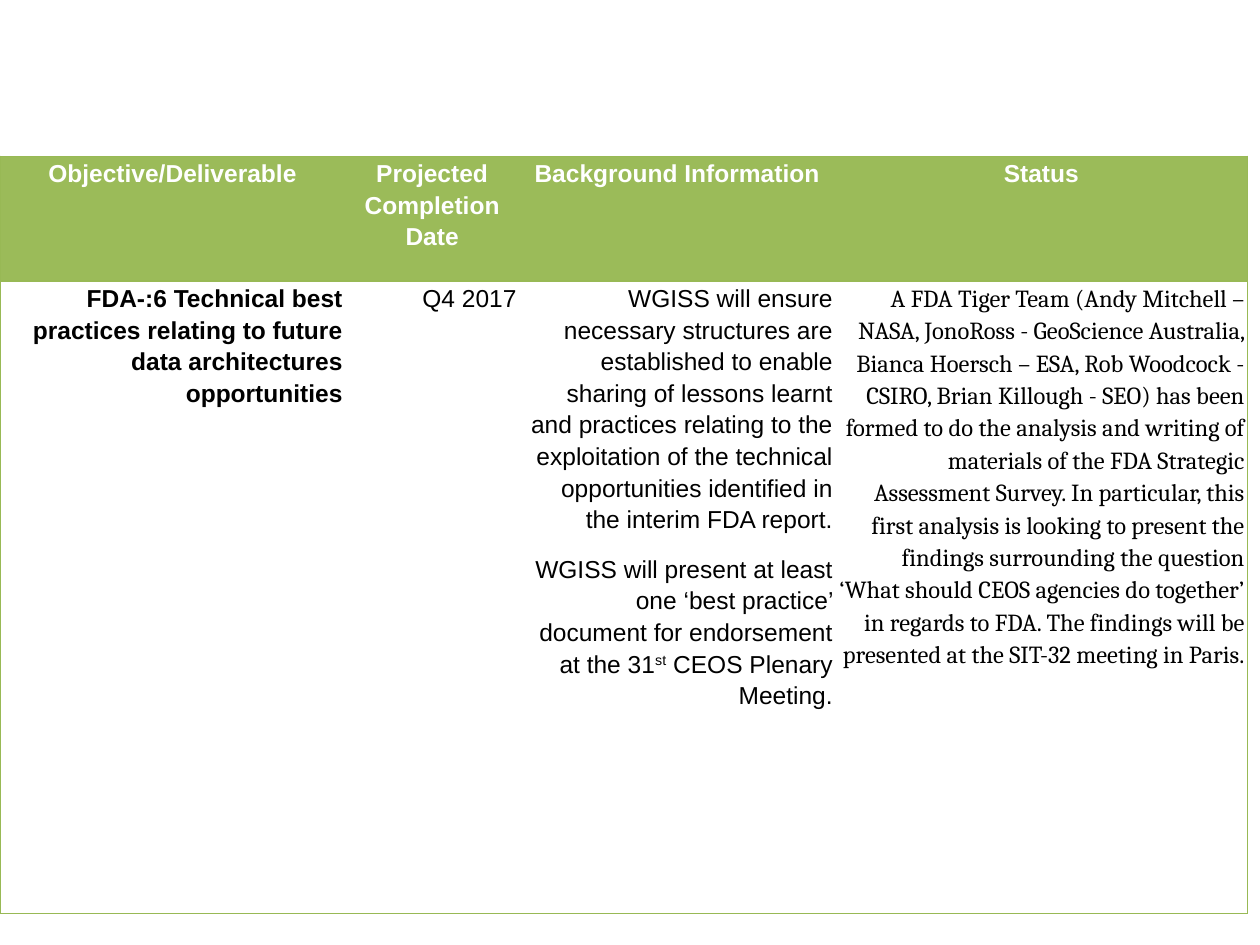
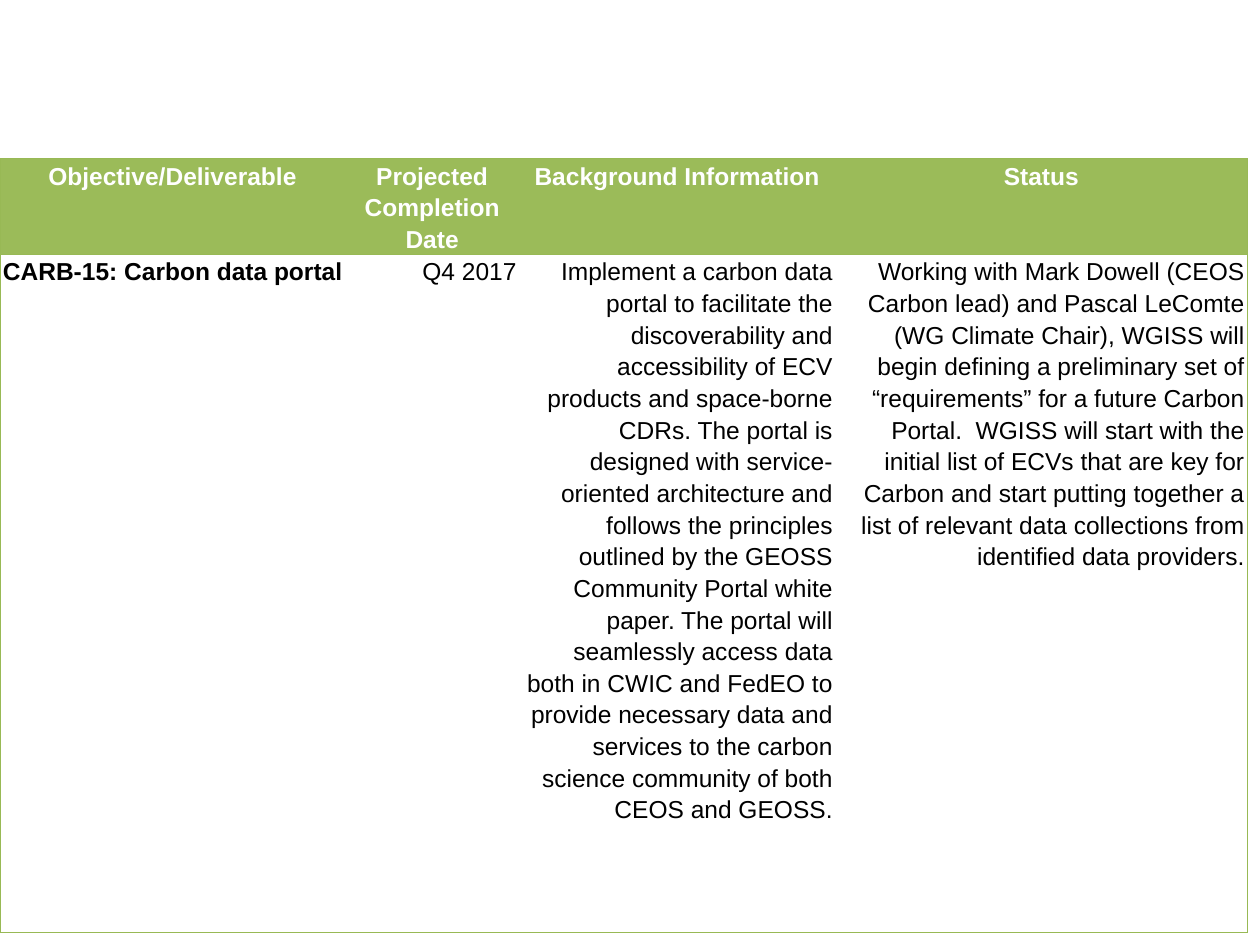
"""Build two slides that report the status of data deliverables in tables."""
from lxml import etree
from pptx import Presentation
from pptx import util as u
from pptx.dml.color import RGBColor
from pptx.enum import text
from pptx.oxml import ns

HEADER_FILL, BORDER, WHITE, BLACK = "9BBB59", "98B955", "FFFFFF", "000000"
HEADINGS = ["Objective/Deliverable", "Projected Completion Date",
            "Background Information", "Status"]
COLUMN_SHARES = [0.274, 0.138, 0.251, 0.327]
SUPERSCRIPT_MARK = "^"

REPORTS = [
    {
        "top": 1.24, "rows": [0.99, 5.02], "status_font": "Cambria",
        "cells": [
            ["FDA-:6 Technical best practices relating to future data "
             "architectures opportunities"],
            ["Q4 2017"],
            ["WGISS will ensure necessary structures are established to enable "
             "sharing of lessons learnt and practices relating to the exploitation "
             "of the technical opportunities identified in the interim FDA report.",
             "WGISS will present at least one ‘best practice’ document for "
             "endorsement at the 31^st^ CEOS Plenary Meeting."],
            ["A FDA Tiger Team (Andy Mitchell – NASA, JonoRoss - GeoScience "
             "Australia, Bianca Hoersch – ESA, Rob Woodcock - CSIRO, Brian Killough "
             "- SEO) has been formed to do the analysis and writing of materials of "
             "the FDA Strategic Assessment Survey. In particular, this first "
             "analysis is looking to present the findings surrounding the question "
             "‘What should CEOS agencies do together’ in regards to FDA. The "
             "findings will be presented at the SIT-32 meeting in Paris."],
        ],
    },
    {
        "top": 1.26, "rows": [0.76, 5.38], "status_font": "Arial",
        "cells": [
            ["CARB-15: Carbon data portal"],
            ["Q4 2017"],
            ["Implement a carbon data portal to facilitate the discoverability and "
             "accessibility of ECV products and space-borne CDRs. The portal is "
             "designed with service-oriented architecture and follows the principles "
             "outlined by the GEOSS Community Portal white paper. The portal will "
             "seamlessly access data both in CWIC and FedEO to provide necessary "
             "data and services to the carbon science community of both CEOS and "
             "GEOSS."],
            ["Working with Mark Dowell (CEOS Carbon lead) and Pascal LeComte (WG "
             "Climate Chair), WGISS will begin defining a preliminary set of "
             "“requirements” for a future Carbon Portal.  WGISS will start with the "
             "initial list of ECVs that are key for Carbon and start putting "
             "together a list of relevant data collections from identified data "
             "providers."],
        ],
    },
]


def set_borders(cell, visible_sides):
    properties = cell._tc.get_or_add_tcPr()
    for side in "LRTB":
        line = etree.SubElement(properties, ns.qn(f"a:ln{side}"), w=str(u.Pt(0.75)))
        if side in visible_sides:
            fill = etree.SubElement(line, ns.qn("a:solidFill"))
            etree.SubElement(fill, ns.qn("a:srgbClr"), val=BORDER)
        else:
            etree.SubElement(line, ns.qn("a:noFill"))


def write_cell(cell, paragraphs, font_name, color, bold, alignment):
    cell.margin_left = cell.margin_right = u.Inches(0.02)
    cell.margin_top = cell.margin_bottom = 0
    cell.vertical_anchor = text.MSO_ANCHOR.TOP
    frame = cell.text_frame
    for index, content in enumerate(paragraphs):
        paragraph = frame.add_paragraph() if index else frame.paragraphs[0]
        paragraph.alignment = alignment
        paragraph.line_spacing = 1.15
        paragraph.space_after = u.Pt(10)
        for part, piece in enumerate(content.split(SUPERSCRIPT_MARK)):
            run = paragraph.add_run()
            run.text = piece
            run.font.name = font_name
            run.font.size = u.Pt(14)
            run.font.bold = bold
            run.font.color.rgb = RGBColor.from_string(color)
            if part % 2:
                run._r.get_or_add_rPr().set("baseline", "30000")
    paragraph.space_after = u.Pt(10 if color == WHITE else 0)


presentation = Presentation()
presentation.slide_width = u.Inches(10)
presentation.slide_height = u.Inches(7.5)

for report in REPORTS:
    slide = presentation.slides.add_slide(presentation.slide_layouts[6])
    table_width = int(presentation.slide_width * sum(COLUMN_SHARES))
    table = slide.shapes.add_table(
        2, len(HEADINGS), 0, u.Inches(report["top"]),
        table_width, u.Inches(sum(report["rows"]))).table
    table.horz_banding = False
    for row, height in zip(table.rows, report["rows"]):
        row.height = u.Inches(height)
    for index, share in enumerate(COLUMN_SHARES):
        table.columns[index].width = int(presentation.slide_width * share)
        is_first, is_last = index == 0, index == len(HEADINGS) - 1
        outer_sides = "L" * is_first + "R" * is_last

        header = table.cell(0, index)
        write_cell(header, [HEADINGS[index]], "Arial", WHITE, True,
                   text.PP_ALIGN.CENTER)
        set_borders(header, "T" + outer_sides)
        header.fill.solid()
        header.fill.fore_color.rgb = RGBColor.from_string(HEADER_FILL)

        body = table.cell(1, index)
        font_name = report["status_font"] if is_last else "Arial"
        write_cell(body, report["cells"][index], font_name, BLACK, is_first,
                   text.PP_ALIGN.RIGHT)
        set_borders(body, "TB" + outer_sides)
        body.fill.background()

presentation.save("out.pptx")
